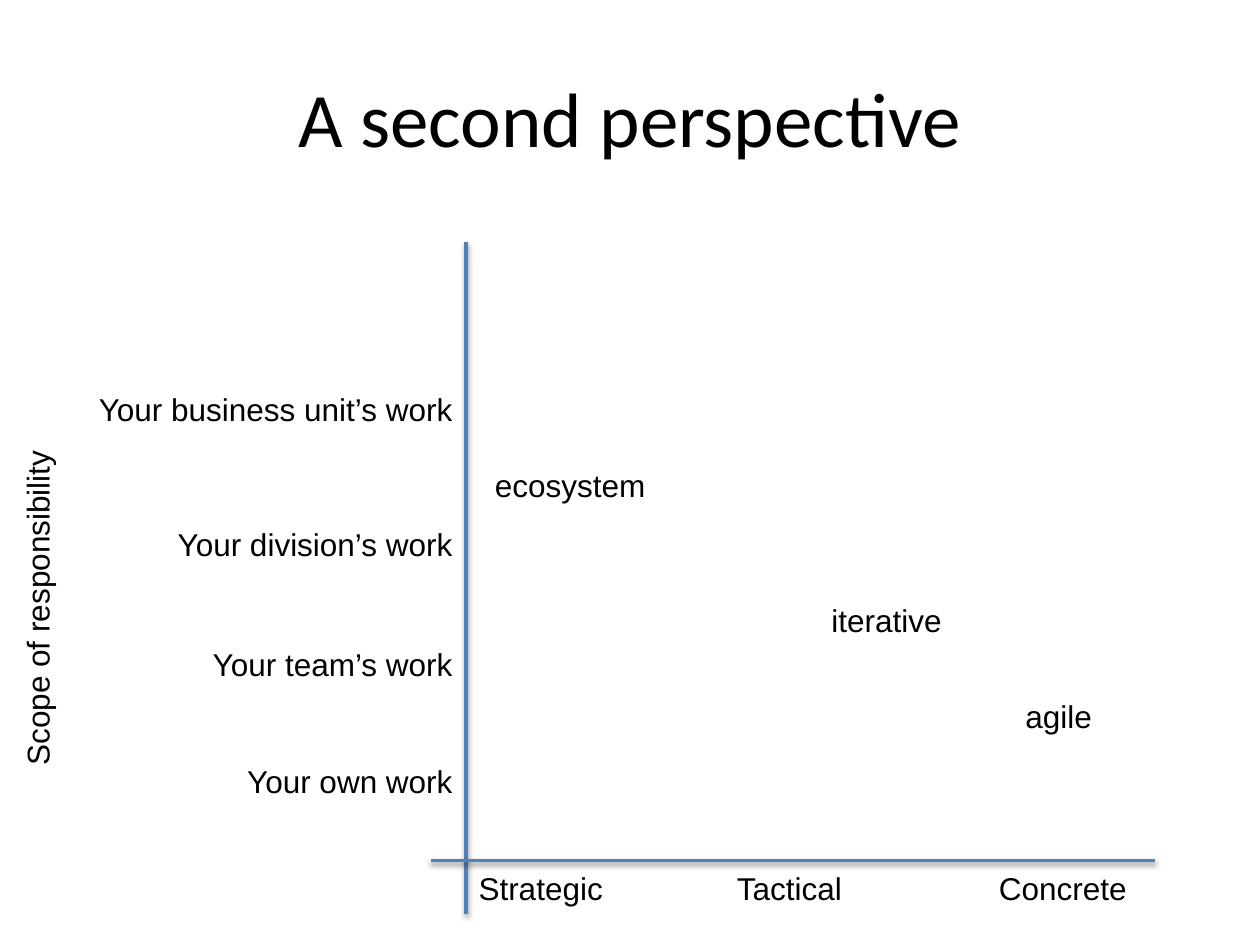
from lxml import etree
from pptx import Presentation
from pptx.dml.color import RGBColor
from pptx.enum import shapes, text
from pptx.oxml import ns
from pptx.util import Inches, Pt

COLORS = {"text": "000000", "axis": "4F81BD", "shadow": "000000"}
TITLE = "A second perspective"
LABEL_HEIGHT = 0.4
SCOPE_RIGHT = 3.69
ACTIVITY_TOP = 6.85

# Axes: start x, start y, end x, end y
AXES = [(3.7, 1.92, 3.7, 7.25), (3.42, 6.83, 9.17, 6.83)]

# Vertical scale: label, top, width
SCOPES = [
    ("Your own work", 6, 1.85),
    ("Your team’s work", 5.07, 2.12),
    ("Your division’s work", 4.12, 2.4),
    ("Your business unit’s work", 3.05, 3.04),
]
# Horizontal scale: label, left, width
ACTIVITIES = [("Strategic", 3.7, 1.2), ("Tactical", 5.75, 1.04), ("Concrete", 7.83, 1.23)]
# Plotted terms: label, left, top, width
TERMS = [
    ("ecosystem", 3.83, 3.65, 1.41),
    ("agile", 8.04, 5.48, 0.73),
    ("iterative", 6.5, 4.72, 1.09),
]


def add_text(slide, words, left, top, width, height=LABEL_HEIGHT, size=18,
             font="Arial", align=text.PP_ALIGN.LEFT, wrap=False):
    shape = slide.shapes.add_textbox(*map(Inches, (left, top, width, height)))
    frame = shape.text_frame
    frame.word_wrap = wrap
    paragraph = frame.paragraphs[0]
    paragraph.text = words
    paragraph.alignment = align
    for name, value in {"name": font, "size": Pt(size)}.items():
        setattr(paragraph.font, name, value)
    paragraph.font.color.rgb = RGBColor.from_string(COLORS["text"])
    return shape


def add_axis(slide, ends):
    axis = slide.shapes.add_connector(shapes.MSO_CONNECTOR.STRAIGHT, *map(Inches, ends))
    axis.line.width = Pt(2)
    axis.line.color.rgb = RGBColor.from_string(COLORS["axis"])
    # Soft shadow straight below the line
    effects = etree.SubElement(axis._element.spPr, ns.qn("a:effectLst"))
    shadow = etree.SubElement(
        effects, ns.qn("a:outerShdw"), blurRad=str(Pt(3.1)), dist=str(Pt(1.6)),
        dir="5400000", rotWithShape="0")
    color = etree.SubElement(shadow, ns.qn("a:srgbClr"), val=COLORS["shadow"])
    etree.SubElement(color, ns.qn("a:alpha"), val="38000")


def main():
    presentation = Presentation()
    presentation.slide_width, presentation.slide_height = Inches(10), Inches(7.5)
    slide = presentation.slides.add_slide(presentation.slide_layouts[6])

    # Title
    title = add_text(slide, TITLE, 0.5, 0.3, 9, 1.25, 44, "Calibri",
                     text.PP_ALIGN.CENTER, True)
    title.text_frame.vertical_anchor = text.MSO_ANCHOR.MIDDLE

    # Axes and the name of the vertical one
    for ends in AXES:
        add_axis(slide, ends)
    add_text(slide, "Scope of responsibility", -1.07, 4.61, 2.73).rotation = 270

    # Scale labels
    for words, top, width in SCOPES:
        add_text(slide, words, SCOPE_RIGHT - width, top, width,
                 align=text.PP_ALIGN.RIGHT)
    for words, left, width in ACTIVITIES:
        add_text(slide, words, left, ACTIVITY_TOP, width)

    # Plotted terms
    for words, left, top, width in TERMS:
        add_text(slide, words, left, top, width)

    presentation.save("out.pptx")


if __name__ == "__main__":
    main()
